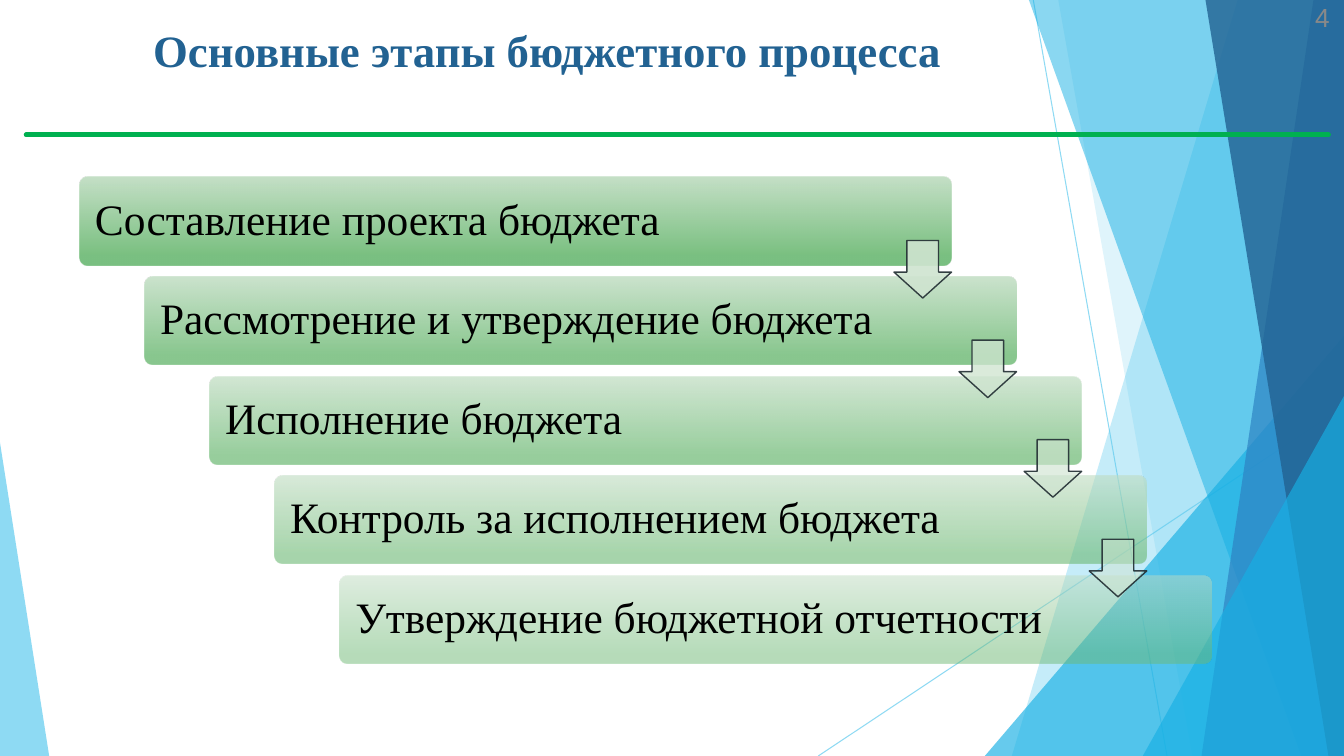
from dataclasses import dataclass

from lxml import etree
from pptx import Presentation
from pptx.dml.color import RGBColor
from pptx.enum.shapes import MSO_CONNECTOR, MSO_SHAPE
from pptx.enum.text import MSO_ANCHOR, PP_ALIGN
from pptx.oxml.ns import qn
from pptx.util import Cm, Pt

STRAIGHT = MSO_CONNECTOR.STRAIGHT
TRIANGLE = MSO_SHAPE.ISOSCELES_TRIANGLE
ROUNDED = MSO_SHAPE.ROUNDED_RECTANGLE
DOWN_ARROW = MSO_SHAPE.DOWN_ARROW
TOP, MIDDLE = MSO_ANCHOR.TOP, MSO_ANCHOR.MIDDLE
LEFT, RIGHT = PP_ALIGN.LEFT, PP_ALIGN.RIGHT

WIDTH, HEIGHT = 33.87, 19.05
STEP_X, STEP_Y = 1.64, 2.51
STAGES = [
    "Составление проекта бюджета",
    "Рассмотрение и утверждение бюджета",
    "Исполнение бюджета",
    "Контроль за исполнением бюджета",
    "Утверждение бюджетной отчетности",
]


@dataclass
class Theme:
    sky: str = "5FCBEF"
    azure: str = "17B0E4"
    blue: str = "2E83C3"
    navy: str = "226292"
    rule: str = "00B050"
    stage_top: str = "C0DDC2"
    stage_bottom: str = "6DBA74"
    arrow: str = "CFE4D0"
    outline: str = "212D32"
    ink: str = "000000"
    gray: str = "898989"
    serif: str = "Times New Roman"
    sans: str = "Arial"
    title_size: float = 32
    stage_size: float = 31
    number_size: float = 18.7


class SlideBuilder:
    def __init__(self, page, theme):
        self.page = page
        self.theme = theme

    def fade(self, element, opacity):
        for color in element.iter(qn("a:srgbClr")):
            etree.SubElement(color, qn("a:alpha"), val=str(round(opacity * 1000)))

    def paint(self, shape, color, opacity):
        shape.shadow.inherit = False
        shape.fill.solid()
        shape.fill.fore_color.rgb = RGBColor.from_string(color)
        self.fade(shape._element.spPr, opacity)
        shape.line.fill.background()

    def line(self, start, end, color, width, opacity=100):
        ends = [Cm(value) for value in (*start, *end)]
        line = self.page.shapes.add_connector(STRAIGHT, *ends)
        line.line.color.rgb = RGBColor.from_string(color)
        line.line.width = Pt(width)
        properties = line._element.spPr
        self.fade(properties, opacity)
        etree.SubElement(properties, qn("a:effectLst"))
        return line

    def band(self, top_x, bottom_x, color, opacity):
        builder = self.page.shapes.build_freeform(Cm(top_x), 0)
        corners = [(WIDTH, 0), (WIDTH, HEIGHT), (bottom_x, HEIGHT)]
        builder.add_line_segments([(Cm(x), Cm(y)) for x, y in corners])
        self.paint(builder.convert_to_shape(), color, opacity)

    def preset(self, kind, bounds, adjustments):
        shape = self.page.shapes.add_shape(kind, *[Cm(value) for value in bounds])
        for index, value in enumerate(adjustments):
            shape.adjustments[index] = value
        shape.shadow.inherit = False
        return shape

    def triangle(self, left, top, width, peak, color, opacity):
        bounds = (left, top, width, HEIGHT - top)
        self.paint(self.preset(TRIANGLE, bounds, [peak]), color, opacity)

    def add_text(self, shape, text, font, size, color, bold=False, align=LEFT, anchor=MIDDLE):
        frame = shape.text_frame
        frame.word_wrap = True
        frame.vertical_anchor = anchor
        para = frame.paragraphs[0]
        para.alignment = align
        span = para.add_run()
        span.text = text
        span.font.name = font
        span.font.size = Pt(size)
        span.font.bold = bold
        span.font.color.rgb = RGBColor.from_string(color)
        return frame

    def text_box(self, bounds, text, font, size, color, **options):
        box = self.page.shapes.add_textbox(*[Cm(value) for value in bounds])
        self.add_text(box, text, font, size, color, **options)

    def stage(self, index, text):
        theme = self.theme
        bounds = (2 + index * STEP_X, 4.46 + index * STEP_Y, 21.97, 2.22)
        bar = self.preset(ROUNDED, bounds, [0.1])
        bar.fill.gradient()
        bar.fill.gradient_angle = 270
        stops = [(0, theme.stage_top), (0.88, theme.stage_bottom)]
        for stop, (position, color) in zip(bar.fill.gradient_stops, stops):
            stop.position = position
            stop.color.rgb = RGBColor.from_string(color)
        self.fade(bar._element.spPr, 90 - 10 * index)
        bar.line.fill.background()
        frame = self.add_text(bar, text, theme.serif, theme.stage_size, theme.ink)
        frame.margin_left = frame.margin_right = Cm(0.33)
        frame.margin_top = frame.margin_bottom = Cm(0.33)
        frame.paragraphs[0].line_spacing = 0.9

    def arrow(self, index):
        bounds = (22.53 + index * STEP_X, 6.06 + index * STEP_Y, 1.45, 1.45)
        arrow = self.preset(DOWN_ARROW, bounds, [0.55, 0.45])
        self.paint(arrow, self.theme.arrow, 90 - 40 * index / 3)
        arrow.line.color.rgb = RGBColor.from_string(self.theme.outline)
        arrow.line.width = Pt(1)
        self.fade(arrow._element.spPr.find(qn("a:ln")), 90)


def main():
    deck = Presentation()
    deck.slide_width, deck.slide_height = Cm(WIDTH), Cm(HEIGHT)
    theme = Theme()
    slide = SlideBuilder(deck.slides.add_slide(deck.slide_layouts[6]), theme)

    slide.line((26.04, 0), (29.41, HEIGHT), theme.sky, 0.75, 70)
    slide.line((WIDTH, 10.24), (20.62, HEIGHT), theme.sky, 0.75, 70)
    slide.band(31.19, 25.5, theme.sky, 36)
    slide.band(26.67, 30.05, theme.sky, 20)
    slide.triangle(24.82, 8.46, 9.05, 1, theme.azure, 66)
    slide.band(25.93, 32.79, theme.azure, 50)
    slide.band(33.1, 30.28, theme.blue, 70)
    slide.band(30.38, 33.48, theme.navy, 80)
    slide.triangle(28.8, 9.98, 5.07, 1, theme.azure, 66)
    slide.triangle(0, 11.15, 1.24, 0, theme.sky, 70)

    rule = slide.line((0.66, 3.4), (33.48, 3.4), theme.rule, 3.5)
    rule._element.spPr.find(qn("a:ln")).set("cap", "rnd")
    slide.text_box((3.61, 0.46, 22.15, 2.67), "Основные этапы бюджетного процесса",
                   theme.serif, theme.title_size, theme.navy, bold=True, anchor=TOP)

    for index, text in enumerate(STAGES):
        slide.stage(index, text)
    for index in range(len(STAGES) - 1):
        slide.arrow(index)
    slide.text_box((32.51, -0.08, 1.25, 1.02), "4",
                   theme.sans, theme.number_size, theme.gray, align=RIGHT)

    deck.save("out.pptx")


if __name__ == "__main__":
    main()
